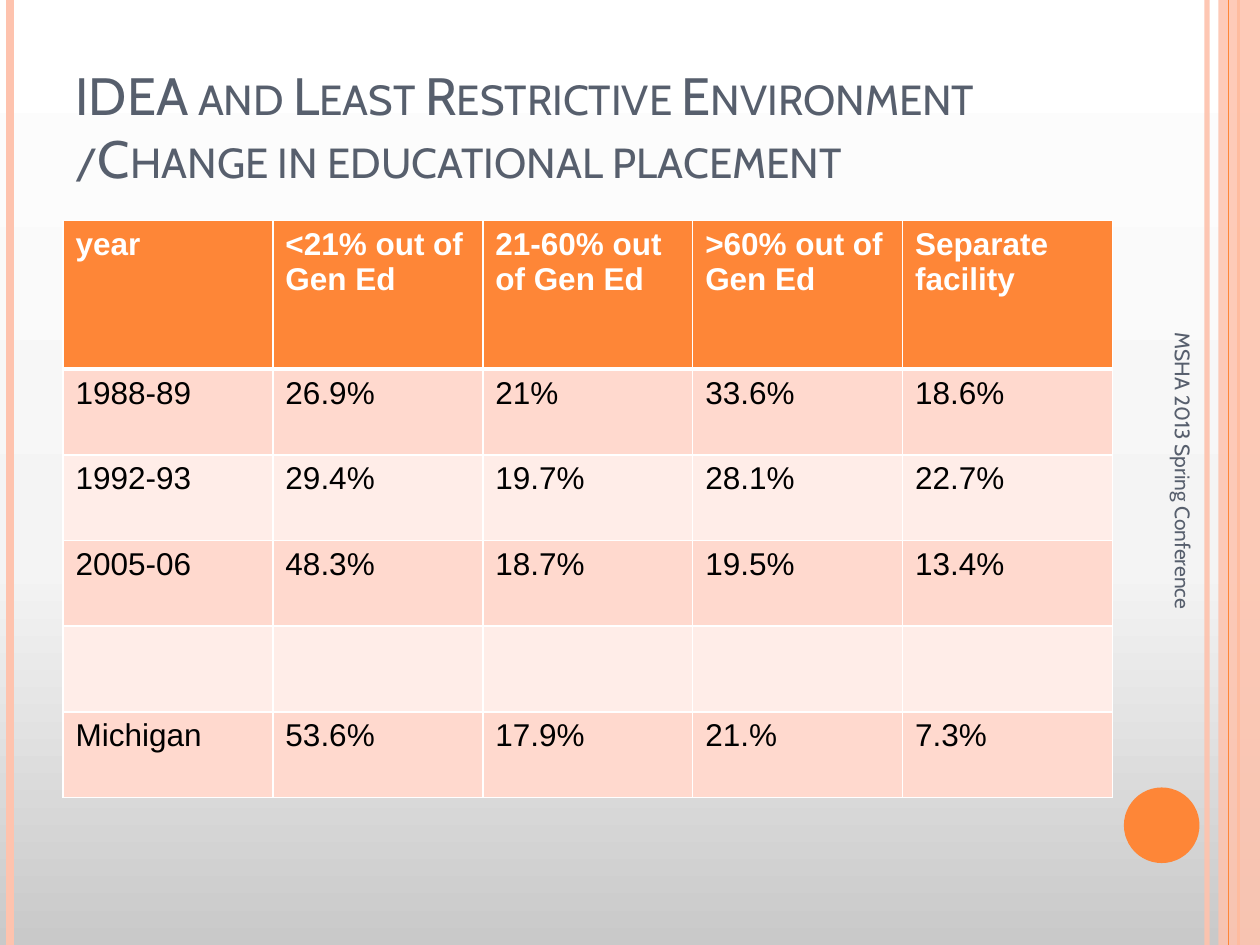
import copy
from dataclasses import dataclass

import pptx
import pptx.dml.color
import pptx.enum.shapes
import pptx.enum.text
import pptx.oxml
import pptx.oxml.ns
import pptx.util
from lxml import etree

Inches = pptx.util.Inches
Pt = pptx.util.Pt
qn = pptx.oxml.ns.qn
text = pptx.enum.text
kinds = pptx.enum.shapes


@dataclass(frozen=True)
class Theme:
    head: str = "Cabin"
    body: str = "Arial"
    big: int = 30
    mid: int = 18
    small: int = 12
    slate: str = "575F6D"
    orange: str = "FE8637"
    peach: str = "FEC3AE"
    white: str = "FFFFFF"
    black: str = "000000"
    bands: tuple = ("FFD9CE", "FFEDE8")
    fade: tuple = ((0, "C9C9C9"), (0.4, "F4F4F4"), (1, "FFFFFF"))


THEME = Theme()

ROWS = [
    ["year", "<21% out of Gen Ed", "21-60% out of Gen Ed", ">60% out of Gen Ed", "Separate facility"],
    ["1988-89", "26.9%", "21%", "33.6%", "18.6%"],
    ["1992-93", "29.4%", "19.7%", "28.1%", "22.7%"],
    ["2005-06", "48.3%", "18.7%", "19.5%", "13.4%"],
    ["", "", "", "", ""],
    ["Michigan", "53.6%", "17.9%", "21.%", "7.3%"],
]


def put(item, values):
    for name, value in values.items():
        setattr(item, name, value)


def rgb(code):
    return pptx.dml.color.RGBColor.from_string(code)


def place(left, top, width, height):
    names = ("left", "top", "width", "height")
    return dict(zip(names, map(Inches, (left, top, width, height))))


def write(para, words, face, size, color, bold=False):
    run = para.add_run()
    run.text = words
    put(run.font, {"name": face, "size": Pt(size), "bold": bold})
    run.font.color.rgb = rgb(color)
    return run


def thin(item, share):
    color = item._element.spPr.find(".//" + qn("a:srgbClr"))
    etree.SubElement(color, qn("a:alpha")).set("val", str(share * 1000))


def add_fade(slide):
    fill = slide.background.fill
    fill.gradient()
    fill.gradient_angle = 90
    stops = slide._element.find(".//" + qn("a:gsLst"))
    stops.insert(1, copy.deepcopy(stops[0]))
    for stop, (spot, color) in zip(fill.gradient_stops, THEME.fade):
        stop.position = spot
        stop.color.rgb = rgb(color)


def add_rule(slide, x, color, width):
    rule = slide.shapes.add_connector(
        kinds.MSO_CONNECTOR.STRAIGHT, Inches(x), 0, Inches(x), Inches(7.5))
    rule.line.width = Pt(width)
    rule.line.color.rgb = rgb(color)
    etree.SubElement(rule._element.spPr, qn("a:effectLst"))
    return rule


def add_block(slide, kind, box, color):
    block = slide.shapes.add_shape(kind, **place(*box))
    block.shadow.inherit = False
    block.fill.solid()
    block.fill.fore_color.rgb = rgb(color)
    block.line.fill.background()
    return block


def add_title(slide, words):
    title = slide.shapes.title
    put(title, place(0.5, 0.3, 8.17, 1.25))
    put(title.text_frame, {
        "word_wrap": True,
        "auto_size": text.MSO_AUTO_SIZE.NONE,
        "vertical_anchor": text.MSO_ANCHOR.BOTTOM,
    })
    para = title.text_frame.paragraphs[0]
    para.alignment = text.PP_ALIGN.LEFT
    run = write(para, words, THEME.head, THEME.big, THEME.slate)
    run._r.get_or_add_rPr().set("cap", "small")


def add_side(slide, words):
    side = slide.shapes.add_textbox(**place(7.64, 4.09, 3.5, 0.4))
    side.rotation = 90
    put(side.text_frame, {
        "word_wrap": True,
        "vertical_anchor": text.MSO_ANCHOR.MIDDLE,
    })
    write(side.text_frame.paragraphs[0], words, THEME.head, THEME.small, THEME.slate)


def edge(cell, sides):
    props = cell._tc.get_or_add_tcPr()
    for side, width in sides.items():
        line = etree.SubElement(props, qn("a:ln" + side))
        line.set("w", str(Pt(width)))
        fill = etree.SubElement(line, qn("a:solidFill"))
        etree.SubElement(fill, qn("a:srgbClr")).set("val", THEME.white)


def add_grid(slide, rows):
    grid = slide.shapes.add_table(
        len(rows), len(rows[0]), **place(0.5, 1.75, 8.33, 4.58)).table
    for r, row in enumerate(rows):
        top = r == 0
        grid.rows[r].height = Inches(1.18 if top else 0.68)
        back = THEME.orange if top else THEME.bands[(r - 1) % 2]
        ink = THEME.white if top else THEME.black
        sides = {"L": 1, "R": 1, "T": 3 if r == 1 else 1, "B": 3 if top else 1}
        for c, words in enumerate(row):
            cell = grid.cell(r, c)
            edge(cell, sides)
            cell.fill.solid()
            cell.fill.fore_color.rgb = rgb(back)
            if words:
                write(cell.text_frame.paragraphs[0], words,
                      THEME.body, THEME.mid, ink, top)


def add_trim(slide):
    shape = kinds.MSO_SHAPE
    thin(add_rule(slide, 9.58, THEME.peach, 3), 93)
    add_rule(slide, 0.08, THEME.peach, 4.5)
    add_rule(slide, 9.83, THEME.orange, 1.5)
    thin(add_block(slide, shape.RECTANGLE, (9.67, 0, 0.33, 7.5), THEME.peach), 87)
    add_rule(slide, 9.75, THEME.orange, 0.75)
    add_block(slide, shape.OVAL, (8.92, 6.25, 0.6, 0.6), THEME.orange)


def main():
    deck = pptx.Presentation()
    put(deck, {"slide_width": Inches(10), "slide_height": Inches(7.5)})
    slide = deck.slides.add_slide(deck.slide_layouts[5])
    add_fade(slide)
    add_trim(slide)
    add_title(slide, "IDEA and Least Restrictive Environment /Change in educational placement")
    add_grid(slide, ROWS)
    add_side(slide, "MSHA 2013 Spring Conference")
    deck.save("out.pptx")


if __name__ == "__main__":
    main()
